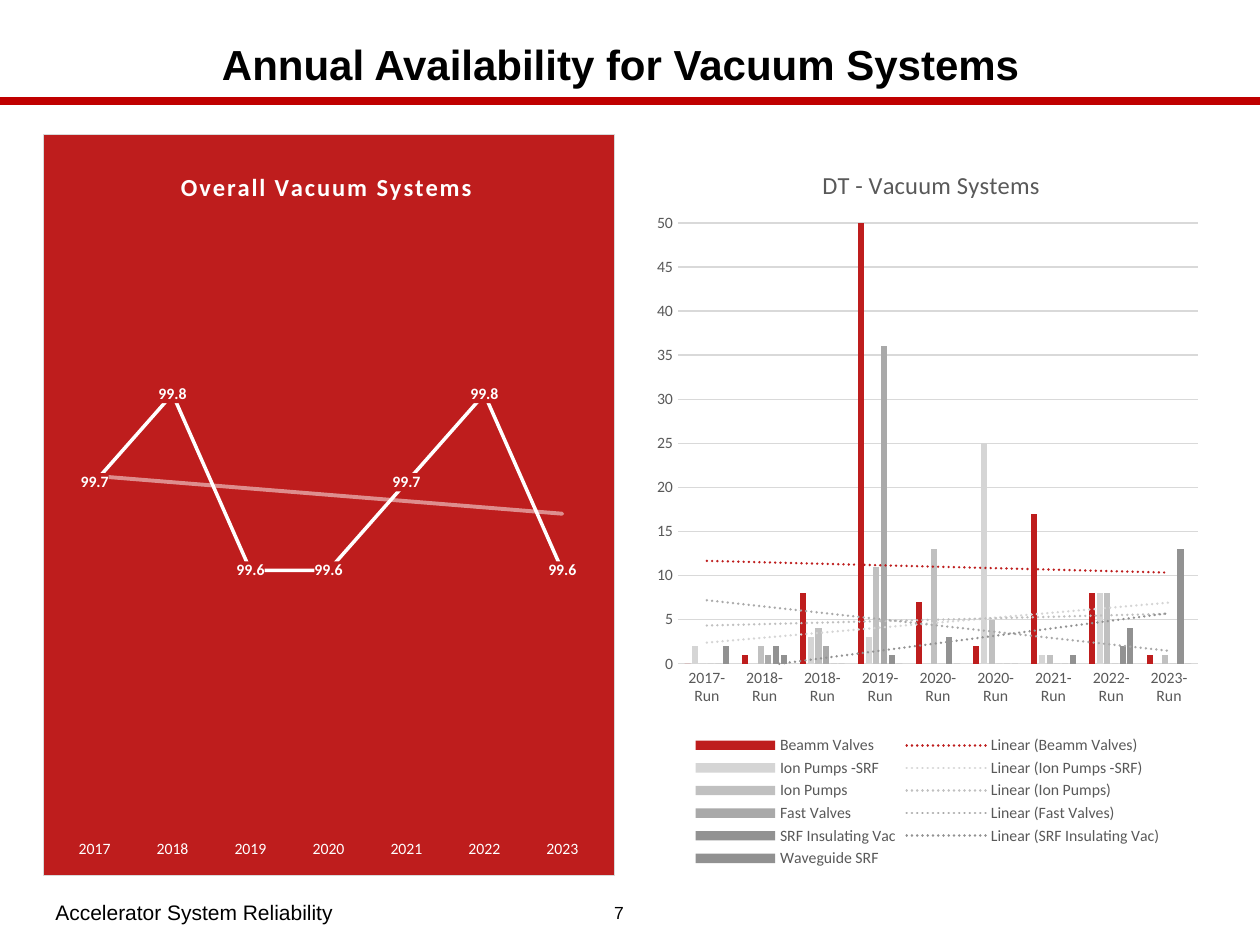
from lxml import etree
from pptx import Presentation
from pptx import util as u
from pptx.chart.data import CategoryChartData
from pptx.dml.color import RGBColor
from pptx.enum import chart as ch, shapes, text
from pptx.oxml import parse_xml
from pptx.oxml.ns import nsdecls, qn

THEME = dict(
    black="000000", white="FFFFFF", rule="C00000", red="BE1D1D", grid="D9D9D9", grey="595959",
    heading=24, footer=12, page=10, chart_title=14, chart_label=9,
    body="Arial", chart="Calibri",
)
TITLE = "Annual Availability for Vacuum Systems "
FOOTERS = [
    ("Accelerator System Reliability", (43, 891, 539, 43), THEME["footer"], text.PP_ALIGN.LEFT),
    ("7", (582, 891, 74, 42), THEME["page"], text.PP_ALIGN.CENTER),
]
AVAILABILITY = dict(
    title="Overall Vacuum Systems", box=(43, 134, 572, 742),
    title_at=(176, 165), plot=(55, 217, 547, 619),
    years=["2017", "2018", "2019", "2020", "2021", "2022", "2023"],
    series=[("Series 1", "FFFFFF", [99.7, 99.8, 99.6, 99.6, 99.7, 99.8, 99.6])],
)
DOWNTIME = dict(
    title="DT - Vacuum Systems", box=(645, 134, 563, 742),
    title_at=(818, 163), plot=(678, 223, 520, 441), legend=(690, 732, 475, 140),
    years=[f"{year}-Run" for year in (2017, 2018, 2018, 2019, 2020, 2020, 2021, 2022, 2023)],
    series=[
        ("Beamm Valves", "BE1D1D", [0, 1, 8, 55, 7, 2, 17, 8, 1]),
        ("Ion Pumps -SRF", "D5D5D5", [2, 0, 3, 3, 0, 25, 1, 8, 0]),
        ("Ion Pumps", "C0C0C0", [0, 2, 4, 11, 13, 5, 1, 8, 1]),
        ("Fast Valves", "A9A9A9", [0, 1, 2, 36, 0, 0, 0, 0, 0]),
        ("SRF Insulating Vac", "929292", [0, 2, 0, 1, 3, 0, 0, 2, 13]),
        ("Waveguide SRF", "919191", [2, 1, 0, 0, 0, 0, 1, 4, 0]),
    ],
)


def px(n):
    return u.Emu(int(n * 914400 / 126))


def rgb(color):
    return RGBColor.from_string(color)


def style(font, size, color, face, bold=False):
    font.size, font.name, font.bold = u.Pt(size), face, bold
    font.color.rgb = rgb(color)


def write(frame, words, size, color=THEME["black"], face=THEME["body"], bold=False,
          align=None, leading=None, tracking=None):
    paragraph = frame.paragraphs[0]
    paragraph.alignment, paragraph.line_spacing = align, leading
    run = paragraph.add_run()
    run.text = words
    style(run.font, size, color, face, bold)
    if tracking:
        run.font._element.set("spc", str(tracking))


def place(shape, box):
    shape.left, shape.top, shape.width, shape.height = map(px, box)


def pin(element, spec_box, chart_box, inner=False):
    left, top, width, height = chart_box
    for old in element.findall(qn("c:layout")):
        element.remove(old)
    values = [("x", (spec_box[0] - left) / width), ("y", (spec_box[1] - top) / height)]
    modes = '<c:xMode val="edge"/><c:yMode val="edge"/>'
    if len(spec_box) == 4:
        values += [("w", spec_box[2] / width), ("h", spec_box[3] / height)]
    if inner:
        modes = '<c:layoutTarget val="inner"/>' + modes
    sizes = "".join(f'<c:{key} val="{value:.4f}"/>' for key, value in values)
    layout = parse_xml(f'<c:layout {nsdecls("c")}><c:manualLayout>{modes}{sizes}'
                       '</c:manualLayout></c:layout>')
    before = [child for child in element if child.tag in (qn("c:tx"), qn("c:legendPos"))]
    element.insert(element.index(before[0]) + 1 if before else 0, layout)


def fill_xml(color, border=None):
    fill = f'<a:solidFill><a:srgbClr val="{color}"/></a:solidFill>' if color else "<a:noFill/>"
    line = (f'<a:ln w="9525"><a:solidFill><a:srgbClr val="{border}"/></a:solidFill></a:ln>'
            if border else "<a:ln><a:noFill/></a:ln>")
    return parse_xml(f'<c:spPr {nsdecls("c", "a")}>{fill}{line}</c:spPr>')


def add_trend(series, color, points, dash, alpha=100):
    trend = parse_xml(
        f'<c:trendline {nsdecls("c", "a")}><c:spPr><a:ln w="{u.Pt(points)}" cap="rnd">'
        f'<a:solidFill><a:srgbClr val="{color}"><a:alpha val="{alpha * 1000}"/></a:srgbClr>'
        f'</a:solidFill><a:prstDash val="{dash}"/></a:ln></c:spPr>'
        '<c:trendlineType val="linear"/><c:dispRSqr val="0"/><c:dispEq val="0"/></c:trendline>')
    series._element.find(qn("c:cat")).addprevious(trend)


def add_chart(slide, content, kind, label_color, title_color, background=None, border=None, **title):
    data = CategoryChartData()
    data.categories = content["years"]
    for name, _, values in content["series"]:
        data.add_series(name, values)
    chart = slide.shapes.add_chart(kind, *map(px, content["box"]), data).chart
    style(chart.font, 10, THEME["black"], THEME["chart"])
    chart.has_title = True
    write(chart.chart_title.text_frame, content["title"], THEME["chart_title"], title_color,
          THEME["chart"], **title)
    chart.chart_title.include_in_layout = False
    chart.has_legend = "legend" in content
    space = chart._chartSpace
    if space.find(qn("c:roundedCorners")) is None:
        corners = etree.Element(qn("c:roundedCorners"), val="0")
        space.find(qn("c:date1904")).addnext(corners)
    space.find(qn("c:chart")).addnext(fill_xml(background, border))
    pin(chart.chart_title._element, content["title_at"], content["box"])
    pin(space.find(".//" + qn("c:plotArea")), content["plot"], content["box"], inner=True)
    for axis in (chart.category_axis, chart.value_axis):
        axis.major_tick_mark = axis.minor_tick_mark = ch.XL_TICK_MARK.NONE
        style(axis.tick_labels.font, THEME["chart_label"], label_color, THEME["chart"])
        axis.format.line.fill.background()
    return chart


def add_availability(slide):
    chart = add_chart(slide, AVAILABILITY, ch.XL_CHART_TYPE.LINE, THEME["white"], THEME["white"],
                      THEME["red"], THEME["grid"], bold=True, tracking=100)
    axis = chart.value_axis
    axis.minimum_scale, axis.maximum_scale = 99.3, 100
    axis.has_major_gridlines = axis.visible = False
    plot = chart.plots[0]
    plot.vary_by_categories = False
    series = plot.series[0]
    series.smooth = False
    series.marker.style = ch.XL_MARKER_STYLE.NONE
    series.format.line.width = u.Pt(2)
    series.format.line.color.rgb = rgb(THEME["white"])
    labels = series.data_labels
    labels.show_value = True
    labels.position = ch.XL_LABEL_POSITION.CENTER
    labels.number_format, labels.number_format_is_linked = "0.0", False
    style(labels.font, THEME["chart_label"], THEME["white"], THEME["chart"], True)
    labels._element.find(qn("c:txPr")).addprevious(fill_xml(THEME["red"]))
    add_trend(series, THEME["white"], 2.25, "solid", alpha=50)


def add_downtime(slide):
    chart = add_chart(slide, DOWNTIME, ch.XL_CHART_TYPE.COLUMN_CLUSTERED,
                      THEME["grey"], THEME["grey"])
    axis = chart.value_axis
    axis.minimum_scale, axis.maximum_scale, axis.major_unit = 0, 50, 5
    for line in (axis.major_gridlines.format.line, chart.category_axis.format.line):
        line.color.rgb = rgb(THEME["grid"])
        line.width = u.Pt(0.75)
    plot = chart.plots[0]
    plot.gap_width, plot.overlap, plot.vary_by_categories = 219, -27, False
    for series, (_, color, _) in zip(plot.series, DOWNTIME["series"]):
        series.format.fill.solid()
        series.format.fill.fore_color.rgb = rgb(color)
        series.invert_if_negative = False
    for series, (_, color, _) in zip(list(plot.series)[:-1], DOWNTIME["series"]):
        add_trend(series, color, 1.5, "sysDot")
    legend = chart.legend
    legend.position, legend.include_in_layout = ch.XL_LEGEND_POSITION.BOTTOM, False
    style(legend.font, THEME["chart_label"], THEME["grey"], THEME["chart"])
    pin(legend._element, DOWNTIME["legend"], DOWNTIME["box"])


def main():
    deck = Presentation()
    deck.slide_width, deck.slide_height = px(1260), px(945)
    slide = deck.slides.add_slide(deck.slide_layouts[5])
    rule = slide.shapes.add_connector(shapes.MSO_CONNECTOR.STRAIGHT, *map(px, (-1, 101, 1260, 101)))
    rule.line.color.rgb, rule.line.width = rgb(THEME["rule"]), u.Pt(4.5)
    etree.SubElement(rule._element.spPr, qn("a:effectLst"))
    heading = slide.shapes.title
    place(heading, (43, 33, 1167, 67))
    heading.text_frame.vertical_anchor = text.MSO_ANCHOR.MIDDLE
    write(heading.text_frame, TITLE, THEME["heading"], bold=True,
          align=text.PP_ALIGN.CENTER, leading=0.9)
    for words, box, size, align in FOOTERS:
        footer = slide.shapes.add_textbox(*map(px, box)).text_frame
        footer.word_wrap, footer.vertical_anchor = True, text.MSO_ANCHOR.MIDDLE
        write(footer, words, size, align=align)
    add_availability(slide)
    add_downtime(slide)
    deck.save("out.pptx")


if __name__ == "__main__":
    main()
